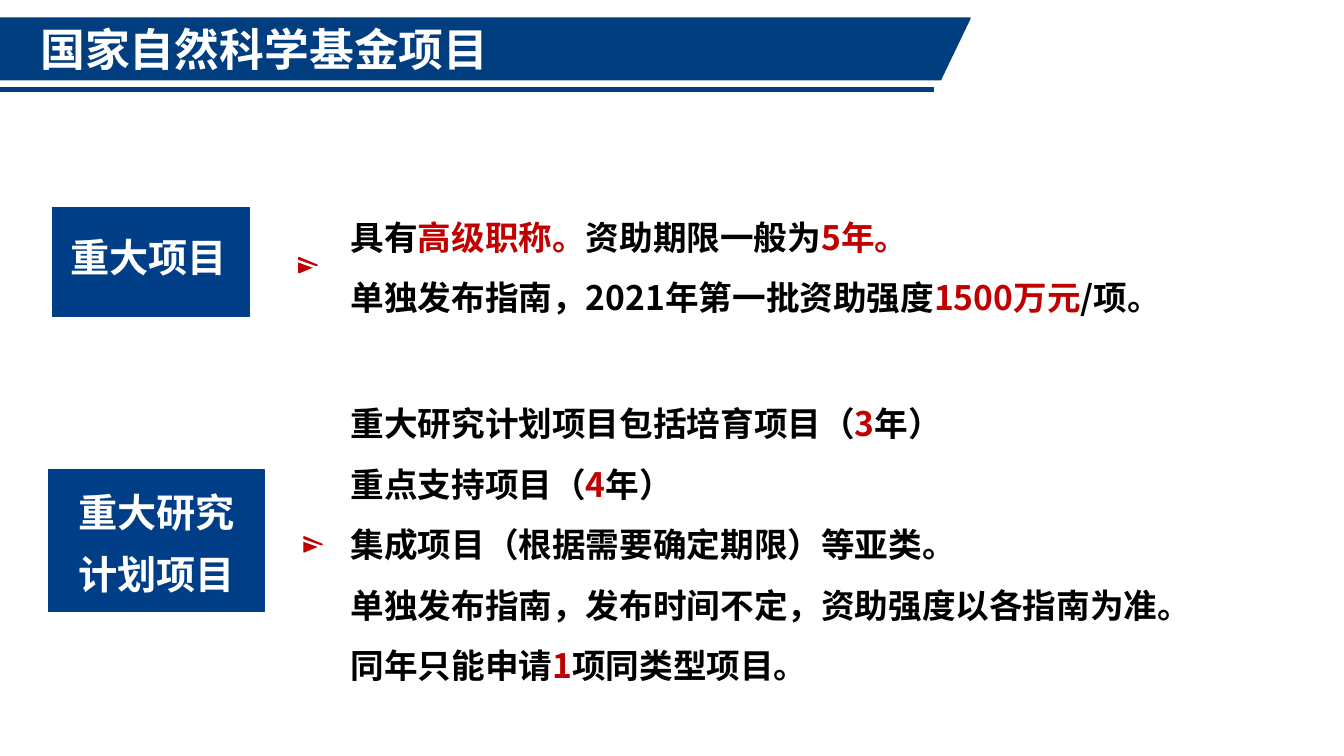
from dataclasses import dataclass

from lxml import etree
from pptx import Presentation
from pptx import util as u
from pptx.dml.color import RGBColor
from pptx.enum import shapes, text
from pptx.oxml.ns import qn


@dataclass(frozen=True)
class Theme:
    banner: str = "013E80"
    label: str = "003F88"
    accent: str = "C00000"
    body: str = "000000"
    white: str = "FFFFFF"
    font: str = "Noto Sans CJK SC"
    title_size: int = 32
    label_size: int = 28
    body_size: int = 24


THEME = Theme()

MAJOR_PROJECT = [
    [("具有", False), ("高级职称。", True), ("资助期限一般为", False), ("5年。", True)],
    [("单独发布指南，2021年第一批资助强度", False), ("1500万元", True), ("/项。", False)],
]
RESEARCH_PLAN = [
    [("重大研究计划项目包括培育项目（", False), ("3", True), ("年）", False)],
    [("重点支持项目（", False), ("4", True), ("年）", False)],
    [("集成项目（根据需要确定期限）等亚类。", False)],
    [("单独发布指南，发布时间不定，资助强度以各指南为准。", False)],
    [("同年只能申请", False), ("1", True), ("项同类型项目。", False)],
]


def inches(box):
    return [u.Inches(value) for value in box]


def add_span(para, words, size, color):
    span = para.add_run()
    span.text = words
    span.font.size = u.Pt(size)
    span.font.bold = True
    span.font.name = THEME.font
    span.font.color.rgb = RGBColor.from_string(color)
    east_asian = etree.SubElement(span.font._element, qn("a:ea"))
    east_asian.set("typeface", THEME.font)


def write_lines(frame, lines, size, spacing=None, align=text.PP_ALIGN.LEFT):
    frame.word_wrap = True
    for index, line in enumerate(lines):
        para = frame.add_paragraph() if index else frame.paragraphs[0]
        para.alignment = align
        if spacing:
            para.line_spacing = spacing
        for words, color in line:
            add_span(para, words, size, color)


def add_solid(page, kind, box, color, width):
    solid = page.shapes.add_shape(kind, *inches(box))
    solid.shadow.inherit = False
    solid.fill.solid()
    solid.fill.fore_color.rgb = RGBColor.from_string(color)
    solid.line.color.rgb = RGBColor.from_string(color)
    solid.line.width = u.Pt(width)
    return solid


def add_rule(page, start, end, color, width):
    rule = page.shapes.add_connector(
        shapes.MSO_CONNECTOR.STRAIGHT, *inches(start), *inches(end))
    rule.line.color.rgb = RGBColor.from_string(color)
    rule.line.width = u.Pt(width)
    etree.SubElement(rule._element.spPr, qn("a:effectLst"))


def add_header(page, box, words):
    left, top, width, height = box
    banner = add_solid(page, shapes.MSO_SHAPE.PARALLELOGRAM, box, THEME.banner, 1.25)
    banner.adjustments[0] = 0.48
    add_rule(page, (0, top + 0.71), (left + width - 0.36, top + 0.71), THEME.banner, 3.5)
    title = page.shapes.title
    title.left, title.top, title.width, title.height = inches(
        (left + 0.62, top, 8.42, height))
    page.shapes._spTree.append(title._element)
    frame = title.text_frame
    frame.auto_size = text.MSO_AUTO_SIZE.NONE
    frame.vertical_anchor = text.MSO_ANCHOR.MIDDLE
    frame.margin_left = frame.margin_right = u.Inches(0.07)
    frame.margin_top = frame.margin_bottom = u.Inches(0.04)
    write_lines(frame, [[(words, THEME.white)]], THEME.title_size, 1.0)


def add_label(page, box, text_box, lines, spacing=None):
    add_solid(page, shapes.MSO_SHAPE.RECTANGLE, box, THEME.label, 1)
    left, top = box[:2]
    dx, dy, width, height = text_box
    caption = page.shapes.add_textbox(*inches((left + dx, top + dy, width, height)))
    write_lines(caption.text_frame, [[(line, THEME.white)] for line in lines],
                THEME.label_size, spacing)


def add_marker(page, left, top):
    arrow = add_solid(page, shapes.MSO_SHAPE.ISOSCELES_TRIANGLE,
                      (left, top, 0.15, 0.18), THEME.accent, 1)
    arrow.rotation = 90
    add_rule(page, (left - 0.05, top + 0.04), (left + 0.17, top + 0.12), THEME.white, 1.75)


def add_details(page, box, lines):
    details = page.shapes.add_textbox(*inches(box))
    colored = [[(words, THEME.accent if strong else THEME.body) for words, strong in line]
               for line in lines]
    write_lines(details.text_frame, colored, THEME.body_size, 1.5, text.PP_ALIGN.JUSTIFY)


def main():
    deck = Presentation()
    deck.slide_width, deck.slide_height = u.Inches(13.33), u.Inches(7.5)
    page = deck.slides.add_slide(deck.slide_layouts[5])
    add_header(page, (-0.29, 0.18, 9.91, 0.61), "国家自然科学基金项目")
    add_details(page, (3.38, 1.9, 9.44, 1.24), MAJOR_PROJECT)
    add_details(page, (3.38, 3.75, 9.91, 3.06), RESEARCH_PLAN)
    add_label(page, (0.52, 2.06, 1.95, 1.08), (0.08, 0.21, 1.95, 0.57), ["重大项目"])
    add_label(page, (0.48, 4.66, 2.14, 1.41), (0.2, 0, 1.98, 1.51),
              ["重大研究", "计划项目"], 1.3)
    add_marker(page, 2.98, 2.54)
    add_marker(page, 3.03, 5.31)
    deck.save("out.pptx")


if __name__ == "__main__":
    main()
